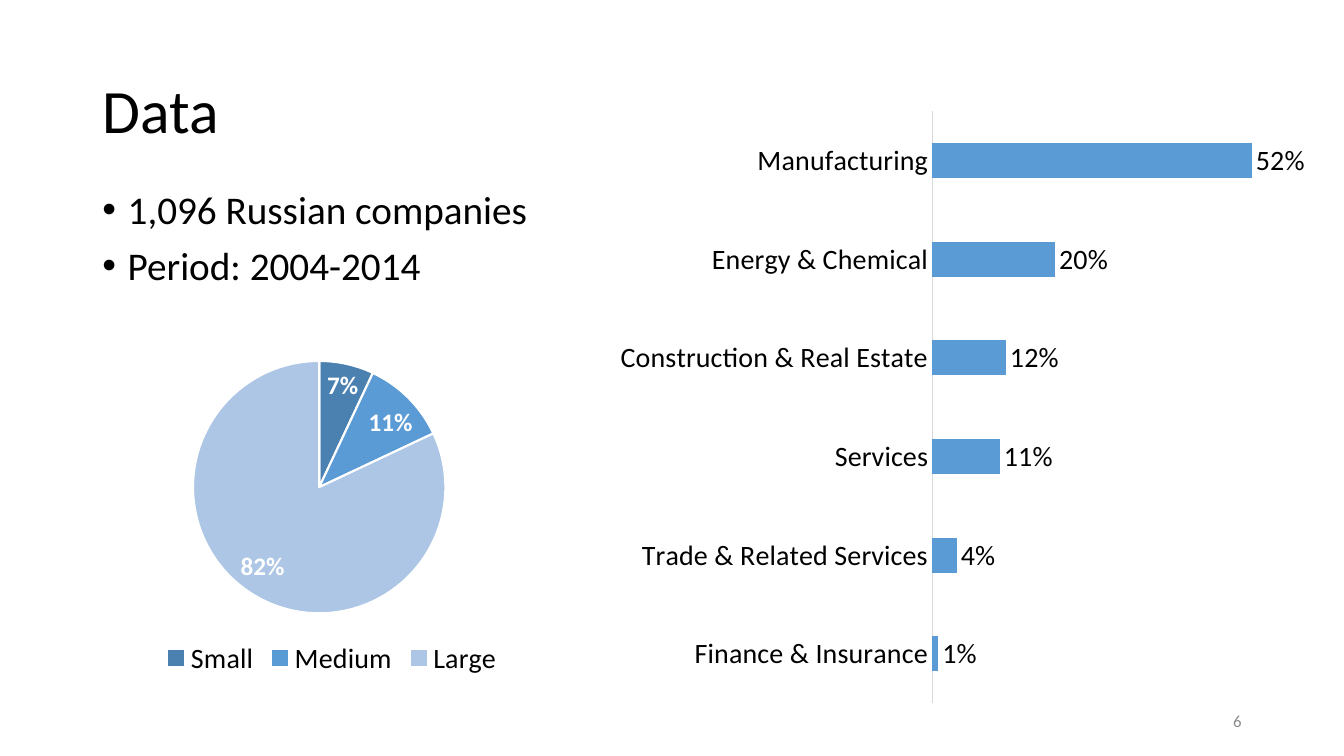
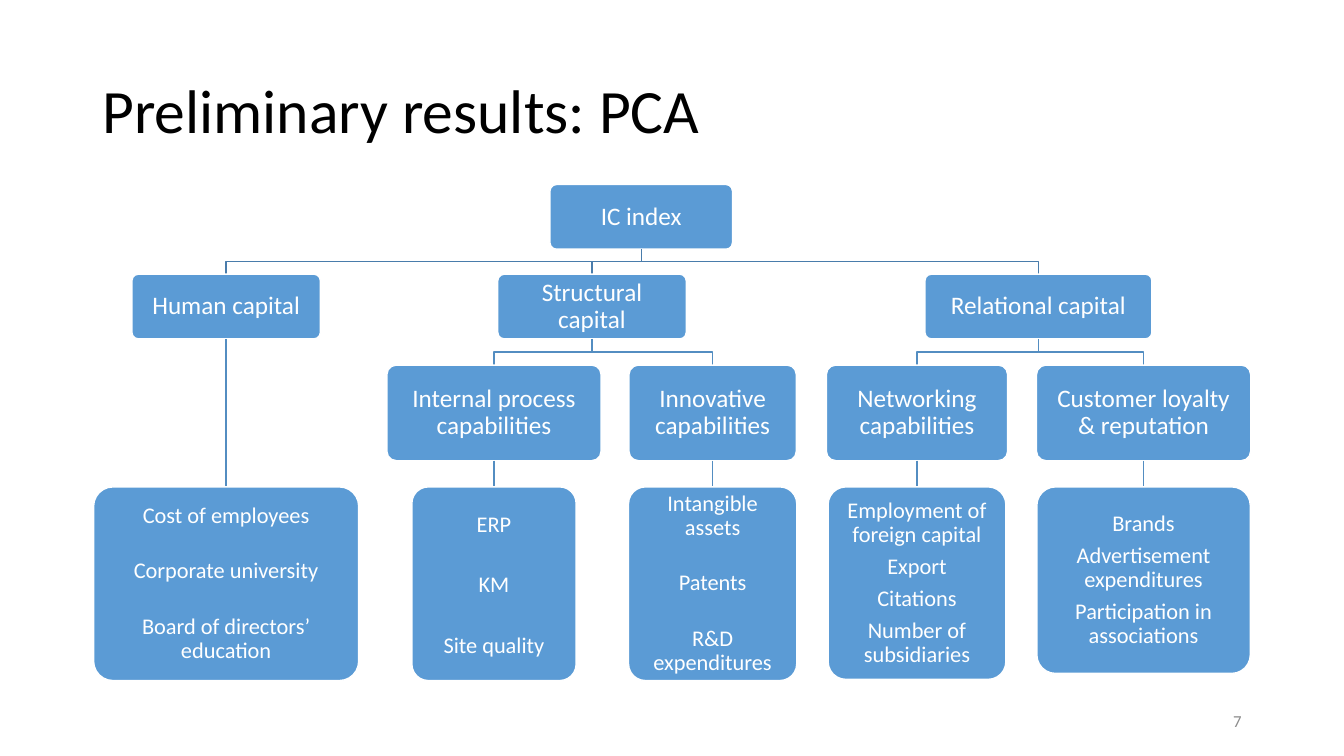
from lxml.etree import SubElement
from pptx import Presentation
from pptx.chart.data import CategoryChartData
from pptx.dml.color import RGBColor
from pptx.enum.chart import XL_CHART_TYPE, XL_LABEL_POSITION, XL_LEGEND_POSITION, XL_TICK_MARK
from pptx.enum.shapes import MSO_CONNECTOR, MSO_SHAPE
from pptx.enum.text import MSO_ANCHOR, PP_ALIGN
from pptx.oxml import parse_xml
from pptx.oxml.ns import nsdecls, qn
from pptx.util import Cm, Pt

BLACK = RGBColor(0, 0, 0)
WHITE = RGBColor(255, 255, 255)
GREY = RGBColor(0x8C, 0x8C, 0x8C)
RULE = RGBColor(0xD9, 0xD9, 0xD9)
BLUE = RGBColor(0x5B, 0x9B, 0xD5)
DEEP = RGBColor(0x4B, 0x81, 0xB1)
PALE = RGBColor(0xAD, 0xC6, 0xE5)
TRUNK = RGBColor(0x49, 0x7C, 0xAB)
TWIG = RGBColor(0x53, 0x8D, 0xC1)
FONT = "Calibri"

FACTS = ["1,096 Russian companies", "Period: 2004-2014"]
FIELDS = {
    "Manufacturing": 0.52,
    "Energy & Chemical": 0.2,
    "Construction & Real Estate": 0.12,
    "Services": 0.11,
    "Trade & Related Services": 0.04,
    "Finance & Insurance": 0.01,
}
SIZES = {"Small": 0.07, "Medium": 0.11, "Large": 0.82}
TINTS = [DEEP, BLUE, PALE]

LEVELS = [(4.65, 1.63), (6.91, 1.63), (9.2, 2.41)]
ROOT = "IC index"
NODES = [
    (ROOT, None, 0, 16.16, 4.6),
    ("Human capital", ROOT, 1, 5.7, 4.75),
    ("Structural capital", ROOT, 1, 14.92, 4.75),
    ("Relational capital", ROOT, 1, 26.17, 5.72),
    ("Internal process capabilities", "Structural capital", 2, 12.45, 5.4),
    ("Innovative capabilities", "Structural capital", 2, 17.96, 4.22),
    ("Networking capabilities", "Relational capital", 2, 23.11, 4.57),
    ("Customer loyalty & reputation", "Relational capital", 2, 28.82, 5.4),
]
LEAF = 12.27
LEAVES = [
    ("Human capital", 6.68, 4.88, 22.4, 0.9,
     ["Cost of employees", "Corporate university", "Board of directors’ education"]),
    ("Internal process capabilities", 4.14, 4.88, 24, 1,
     ["ERP", "KM", "Site quality"]),
    ("Innovative capabilities", 4.24, 4.88, 22.4, 0.9,
     ["Intangible assets", "Patents", "R&D expenditures"]),
    ("Networking capabilities", 4.48, 4.85, 5.6, 0.9,
     ["Employment of foreign capital", "Export", "Citations", "Number of subsidiaries"]),
    ("Customer loyalty & reputation", 5.38, 4.7, 5.6, 0.9,
     ["Brands", "Advertisement expenditures", "Participation in associations"]),
]


def put(item, **values):
    for name, value in values.items():
        setattr(item, name, value)


def style(font, size, color, bold=False):
    put(font, name=FONT, size=Pt(size), bold=bold)
    font.color.rgb = color


def write(shape, lines, size, color, gap=0, space=0.9, **frame):
    text = shape.text_frame
    put(text, word_wrap=True, **frame)
    for i, line in enumerate(lines):
        para = text.paragraphs[0] if i == 0 else text.add_paragraph()
        put(para, line_spacing=space, space_before=Pt(gap if i else 0))
        run = para.add_run()
        run.text = line
        style(run.font, size, color)
    return text.paragraphs


def label(slide, area, lines, size, color, **extra):
    box = slide.shapes.add_textbox(*map(Cm, area))
    return write(box, lines, size, color, **extra)


def start(deck, title, number):
    slide = deck.slides.add_slide(deck.slide_layouts[6])
    mid = MSO_ANCHOR.MIDDLE
    label(slide, (2.33, 1.01, 29.21, 3.68), [title], 44, BLACK, vertical_anchor=mid)
    page = label(slide, (23.92, 17.65, 7.62, 1.01), [str(number)], 12, GREY,
                 space=1, vertical_anchor=mid)
    page[0].alignment = PP_ALIGN.RIGHT
    return slide


def graph(slide, kind, area, data, plot, size, color, spot, bold=False):
    feed = CategoryChartData(number_format="0%")
    feed.categories = list(data)
    feed.add_series("Series 1", list(data.values()))
    chart = slide.shapes.add_chart(kind, *map(Cm, area), feed).chart
    put(chart, has_title=False, has_legend=False)
    style(chart.font, 20, BLACK)
    body = chart.plots[0]
    body.has_data_labels = True
    put(body.data_labels, show_value=True, show_percentage=False, number_format="0%",
        number_format_is_linked=False, position=spot)
    style(body.data_labels.font, size, color, bold)
    zone = chart.element.find(".//" + qn("c:plotArea"))
    for old in zone.findall(qn("c:layout")):
        zone.remove(old)
    layout = parse_xml(f"<c:layout {nsdecls('c')}/>")
    zone.insert(0, layout)
    manual = SubElement(layout, qn("c:manualLayout"))
    marks = [("layoutTarget", "inner"), ("xMode", "edge"), ("yMode", "edge")]
    for tag, value in marks + list(zip("xywh", plot)):
        SubElement(manual, qn("c:" + tag)).set("val", str(value))
    return chart


def bars(slide):
    chart = graph(slide, XL_CHART_TYPE.BAR_CLUSTERED, (15.27, 2.49, 17.88, 15.54),
                  FIELDS, (0.46, 0.02, 0.52, 0.96), 20, BLACK,
                  XL_LABEL_POSITION.OUTSIDE_END)
    put(chart.plots[0], gap_width=182, vary_by_categories=False)
    fill = chart.plots[0].series[0].format.fill
    fill.solid()
    fill.fore_color.rgb = BLUE
    axis = chart.category_axis
    put(axis, reverse_order=True, major_tick_mark=XL_TICK_MARK.NONE,
        has_major_gridlines=False)
    axis.format.line.color.rgb = RULE
    axis.format.line.width = Pt(0.75)
    style(axis.tick_labels.font, 20, BLACK)
    put(chart.value_axis, visible=False, has_major_gridlines=False,
        minimum_scale=0, maximum_scale=0.6)


def pie(slide):
    chart = graph(slide, XL_CHART_TYPE.PIE, (1.88, 7.85, 12.98, 9.32),
                  SIZES, (0.23, 0.13, 0.49, 0.69), 18, WHITE,
                  XL_LABEL_POSITION.BEST_FIT, True)
    chart.has_legend = True
    put(chart.legend, position=XL_LEGEND_POSITION.BOTTOM, include_in_layout=False)
    style(chart.legend.font, 20, BLACK)
    for i, tint in enumerate(TINTS):
        look = chart.plots[0].series[0].points[i].format
        look.fill.solid()
        look.fill.fore_color.rgb = tint
        look.line.color.rgb = WHITE
        look.line.width = Pt(1.5)


def link(slide, ax, ay, bx, by, color):
    ax, ay, bx, by = map(Cm, (ax, ay, bx, by))
    if ax == bx:
        line = slide.shapes.add_connector(MSO_CONNECTOR.STRAIGHT, ax, ay, bx, by)
        SubElement(line.element.spPr, qn("a:effectLst"))
    else:
        mid = (ay + by) // 2
        pen = slide.shapes.build_freeform(ax, ay)
        pen.add_line_segments([(ax, mid), (bx, mid), (bx, by)], close=False)
        line = pen.convert_to_shape()
        line.fill.background()
        line.shadow.inherit = False
    line.line.color.rgb = color
    line.line.width = Pt(1)


def card(slide, x, top, wide, high, lines, size, pad, **extra):
    area = map(Cm, (x - wide / 2, top, wide, high))
    box = slide.shapes.add_shape(MSO_SHAPE.ROUNDED_RECTANGLE, *area)
    box.adjustments[0] = 0.1
    box.shadow.inherit = False
    box.fill.solid()
    box.fill.fore_color.rgb = BLUE
    box.line.color.rgb = WHITE
    box.line.width = Pt(1)
    paras = write(box, lines, size, WHITE, vertical_anchor=MSO_ANCHOR.MIDDLE,
                  margin_left=Cm(pad), margin_right=Cm(pad),
                  margin_top=0, margin_bottom=0, **extra)
    for para in paras:
        para.alignment = PP_ALIGN.CENTER


def tree(slide):
    ends = {}
    for name, owner, level, x, wide in NODES:
        top, high = LEVELS[level]
        if owner:
            link(slide, *ends[owner], x, top, TRUNK if level == 1 else TWIG)
        card(slide, x, top, wide, high, [name], 18, 0.22)
        ends[name] = x, top + high
    for owner, wide, high, gap, space, lines in LEAVES:
        x, end = ends[owner]
        link(slide, x, end, x, LEAF, TWIG)
        card(slide, x, LEAF, wide, high, lines, 16, 0.32, gap=gap, space=space)


def main():
    deck = Presentation()
    put(deck, slide_width=Cm(33.87), slide_height=Cm(19.05))
    data = start(deck, "Data", 6)
    for para in label(data, (2.33, 4.67, 12.5, 3), FACTS, 28, BLACK, gap=10):
        props = para._p.get_or_add_pPr()
        props.set("marL", str(Cm(0.64)))
        props.set("indent", str(Cm(-0.64)))
        SubElement(props, qn("a:buFont")).set("typeface", "Arial")
        SubElement(props, qn("a:buChar")).set("char", "•")
    bars(data)
    pie(data)
    tree(start(deck, "Preliminary results: PCA", 7))
    deck.save("out.pptx")


if __name__ == "__main__":
    main()
